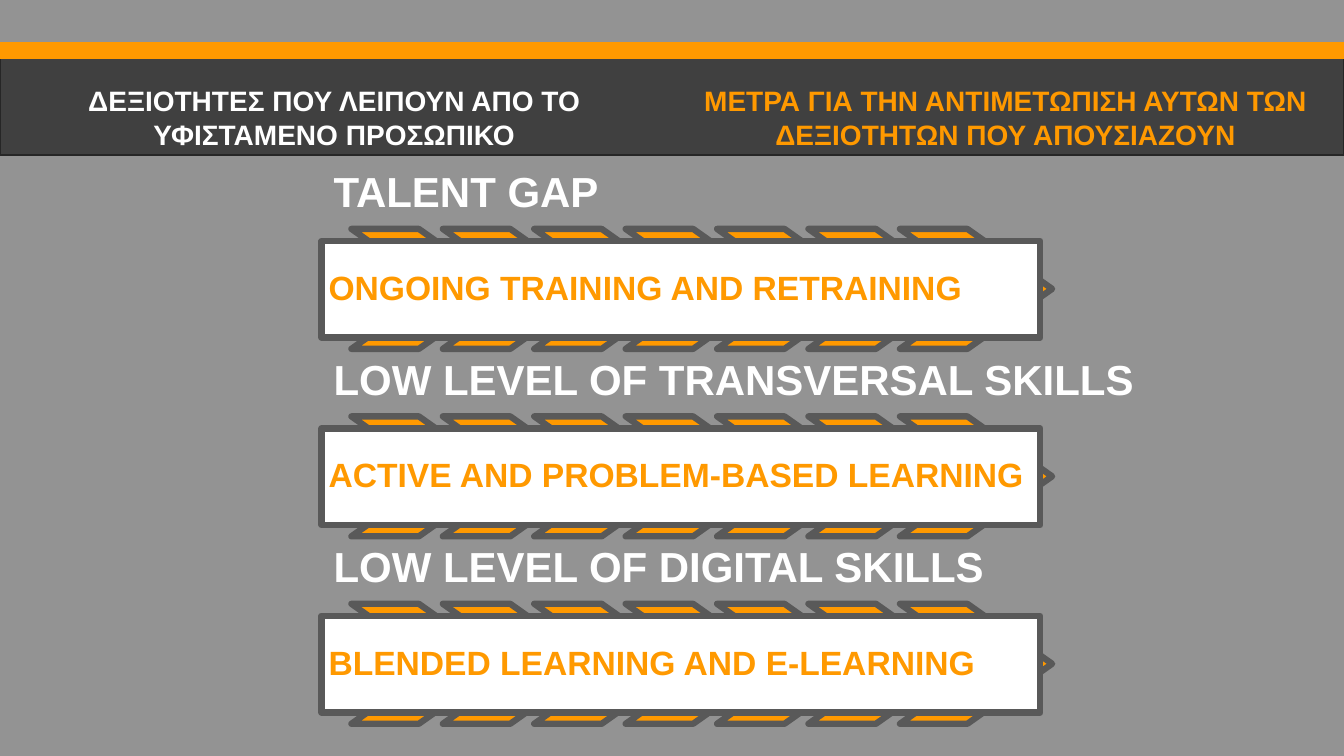
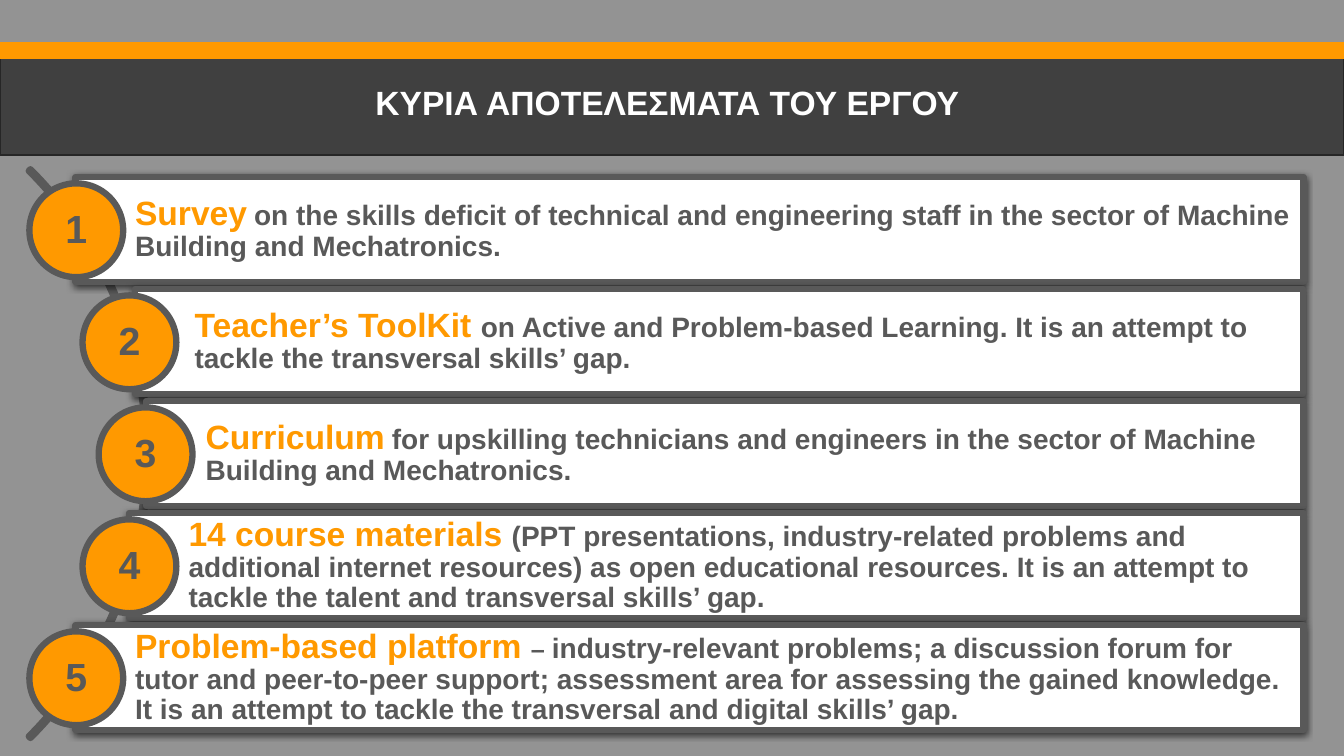
from dataclasses import dataclass

from lxml import etree
from pptx import Presentation
from pptx.dml.color import RGBColor
from pptx.enum.shapes import MSO_SHAPE
from pptx.enum.text import MSO_ANCHOR, MSO_AUTO_SIZE, PP_ALIGN
from pptx.oxml.ns import qn
from pptx.util import Pt

RECT, CHEVRON = MSO_SHAPE.RECTANGLE, MSO_SHAPE.CHEVRON
OVAL, ARC = MSO_SHAPE.OVAL, MSO_SHAPE.BLOCK_ARC
LEFT, CENTER = PP_ALIGN.LEFT, PP_ALIGN.CENTER
TOP, MIDDLE, BOTTOM = MSO_ANCHOR.TOP, MSO_ANCHOR.MIDDLE, MSO_ANCHOR.BOTTOM
NO_AUTOFIT = MSO_AUTO_SIZE.NONE
SECTION_LAYOUT, TITLE_LAYOUT = 2, 5


@dataclass(frozen=True)
class Theme:
    font: str = "Arial"
    # Colours
    page: str = "939393"
    band: str = "404040"
    band_edge: str = "262626"
    accent: str = "FF9900"
    dark: str = "595959"
    white: str = "FFFFFF"
    # Type sizes
    label: int = 30
    number: int = 28
    lead: int = 24
    body: int = 20
    link: int = 18
    # Outline width of the diagrams
    outline: float = 4.5


THEME = Theme()


class Deck:
    """Holds the style and the current slide."""

    def __init__(self, theme):
        self.theme = theme
        self.prs = Presentation()
        self.prs.slide_width, self.prs.slide_height = Pt(960), Pt(540)
        self.slide = None

    def new_slide(self, layout):
        first = self.slide is None
        self.slide = self.prs.slides.add_slide(self.prs.slide_layouts[layout])
        if first:
            self.dress_master()

    def dress_master(self):
        """Put the page colour and the header bands on the slide master."""
        t, master = self.theme, self.prs.slide_master
        master.background.fill.solid()
        master.background.fill.fore_color.rgb = RGBColor.from_string(t.page)
        bands = (
            self.shape(RECT, (0, 30.2, 960, 80.6), t.band, t.band_edge, 1),
            self.shape(RECT, (0, 30.2, 960, 11.5), t.accent, t.accent, 1),
        )
        tree = master.shapes.element
        for index, band in enumerate(bands):
            band.element.nvSpPr.cNvPr.id = 100 + index
            tree.insert(2 + index, band.element)

    def shape(self, kind, box, fill=None, line=None, width=None, adjust=()):
        t = self.theme
        item = self.slide.shapes.add_shape(kind, *map(Pt, box))
        item.shadow.inherit = False
        item.fill.solid()
        item.fill.fore_color.rgb = RGBColor.from_string(fill or t.accent)
        item.line.color.rgb = RGBColor.from_string(line or t.dark)
        item.line.width = Pt(width or t.outline)
        for index, value in enumerate(adjust):
            item.adjustments[index] = value
        return item

    def set_text(self, item, runs, align=LEFT, anchor=MIDDLE,
                 insets=(5, 5, 5, 5), spacing=0.9):
        """Fill a shape with one paragraph of (text, size, colour) runs."""
        sides = ("margin_left", "margin_top", "margin_right", "margin_bottom")
        frame_format = dict(zip(sides, map(Pt, insets)))
        frame_format.update(word_wrap=True, auto_size=NO_AUTOFIT,
                            vertical_anchor=anchor)
        for name, value in frame_format.items():
            setattr(item.text_frame, name, value)

        paragraph = item.text_frame.paragraphs[0]
        paragraph_format = dict(alignment=align, line_spacing=spacing,
                                space_before=Pt(0), space_after=Pt(0))
        for name, value in paragraph_format.items():
            setattr(paragraph, name, value)

        for text, size, colour in runs:
            run = paragraph.add_run()
            run.text = text
            run_format = dict(name=self.theme.font, size=Pt(size), bold=True)
            for name, value in run_format.items():
                setattr(run.font, name, value)
            run.font.color.rgb = RGBColor.from_string(colour)

    def heading(self, index, text, box, size, colour):
        holder = self.slide.placeholders[index]
        sides = ("left", "top", "width", "height")
        for name, value in zip(sides, map(Pt, box)):
            setattr(holder, name, value)
        self.set_text(holder, [(text, size, colour)], CENTER, TOP,
                      (7.2, 3.6, 7.2, 3.6), 1.0)

    def label(self, text, box):
        item = self.slide.shapes.add_textbox(*map(Pt, box))
        self.set_text(item, [(text, self.theme.label, self.theme.white)],
                      anchor=BOTTOM, insets=(8.6, 8.6, 8.6, 8.6))

    def bar(self, box, runs, inset=5, shadow=False):
        item = self.shape(RECT, box, self.theme.white)
        if shadow:
            self.add_shadow(item)
        self.set_text(item, runs, insets=(inset, 5, 5, 5))

    def add_shadow(self, item):
        effects = item.element.spPr.find(qn("a:effectLst"))
        outer = etree.SubElement(
            effects, qn("a:outerShdw"), blurRad=str(Pt(4.5)),
            dist=str(Pt(1.5)), dir="5400000", rotWithShape="0")
        colour = etree.SubElement(outer, qn("a:srgbClr"), val="000000")
        etree.SubElement(colour, qn("a:alpha"), val="63000")

    def badge(self, number, box):
        item = self.shape(OVAL, box)
        self.set_text(item,
                      [(str(number), self.theme.number, self.theme.dark)],
                      CENTER, insets=(0, 0, 0, 3), spacing=1.0)


# Missing skill, measure against it
GAPS = (
    ("TALENT GAP", "ONGOING TRAINING AND RETRAINING"),
    ("LOW LEVEL OF TRANSVERSAL SKILLS", "ACTIVE AND PROBLEM-BASED LEARNING"),
    ("LOW LEVEL OF DIGITAL SKILLS", "BLENDED LEARNING AND E-LEARNING"),
)

# Badge left, bar left, lead words, link, detail
RESULTS = (
    (21, 54, "Survey", " ",
     "on the skills deficit of technical and engineering staff in the sector "
     "of Machine Building and Mechatronics."),
    (59, 96.5, "Teacher’s ToolKit ", "",
     "on Active and Problem-based Learning. It is an attempt to tackle the "
     "transversal skills’ gap."),
    (70.5, 104.4, "Curriculum", " ",
     "for upskilling technicians and engineers in the sector of Machine "
     "Building and Mechatronics."),
    (59, 92.2, "14 course materials ", "",
     "(PPT presentations, industry-related problems and additional internet "
     "resources) as open educational resources. It is an attempt to tackle "
     "the talent and transversal skills’ gap."),
    (21, 54, "Problem-based platform ", "– ",
     "industry-relevant problems; a discussion forum for tutor and "
     "peer-to-peer support; assessment area for assessing the gained "
     "knowledge. It is an attempt to tackle the transversal and digital "
     "skills’ gap."),
)


def build_gaps(deck):
    t = deck.theme
    deck.new_slide(SECTION_LAYOUT)
    deck.heading(0, "ΔΕΞΙΟΤΗΤΕΣ ΠΟΥ ΛΕΙΠΟΥΝ ΑΠΟ ΤΟ ΥΦΙΣΤΑΜΕΝΟ ΠΡΟΣΩΠΙΚΟ",
                 (0, 56.2, 477.4, 55.4), t.body, t.white)
    deck.heading(1, "ΜΕΤΡΑ ΓΙΑ ΤΗΝ ΑΝΤΙΜΕΤΩΠΙΣΗ ΑΥΤΩΝ ΤΩΝ ΔΕΞΙΟΤΗΤΩΝ "
                 "ΠΟΥ ΑΠΟΥΣΙΑΖΟΥΝ",
                 (488.9, 56.2, 458.6, 55.4), t.body, t.accent)

    # Each gap: label, row of chevrons, measure on top
    left, row_step, chevron_step, chevron_count = 229.7, 133.9, 65.3, 7
    for row, (gap, measure) in enumerate(GAPS):
        top = 121 + row * row_step
        deck.label(gap, (left, top, 707.8, 42.5))
        for column in range(chevron_count):
            deck.shape(CHEVRON, (251 + column * chevron_step, top + 42.5,
                                 108.7, 85.7), adjust=(0.706,))
        deck.bar((left, top + 51.1, 513.4, 69.1),
                 [(measure, t.lead, t.accent)])


def build_results(deck):
    t = deck.theme
    deck.new_slide(TITLE_LAYOUT)
    deck.heading(0, "ΚΥΡΙΑ ΑΠΟΤΕΛΕΣΜΑΤΑ ΤΟΥ ΕΡΓΟΥ",
                 (178.6, 54.7, 596.2, 36), t.lead, t.white)

    # Arc that the badges sit on
    deck.shape(ARC, (-468.7, 36.7, 574.6, 574.6), t.dark,
               adjust=(189, 27, 0.003))

    # Numbered results
    bars_right, row_step, badge_size = 931, 80, 67
    for row, (badge_left, bar_left, lead, link, detail) in enumerate(RESULTS):
        top = 126.5 + row * row_step
        runs = [(lead, t.lead, t.accent), (link, t.link, t.dark),
                (detail, t.body, t.dark)]
        deck.bar((bar_left, top, bars_right - bar_left, 75),
                 [run for run in runs if run[0]], inset=42.5, shadow=True)
        deck.badge(row + 1, (badge_left, top + 4.5, badge_size, badge_size))


def main():
    deck = Deck(THEME)
    build_gaps(deck)
    build_results(deck)
    deck.prs.save("out.pptx")


if __name__ == "__main__":
    main()
